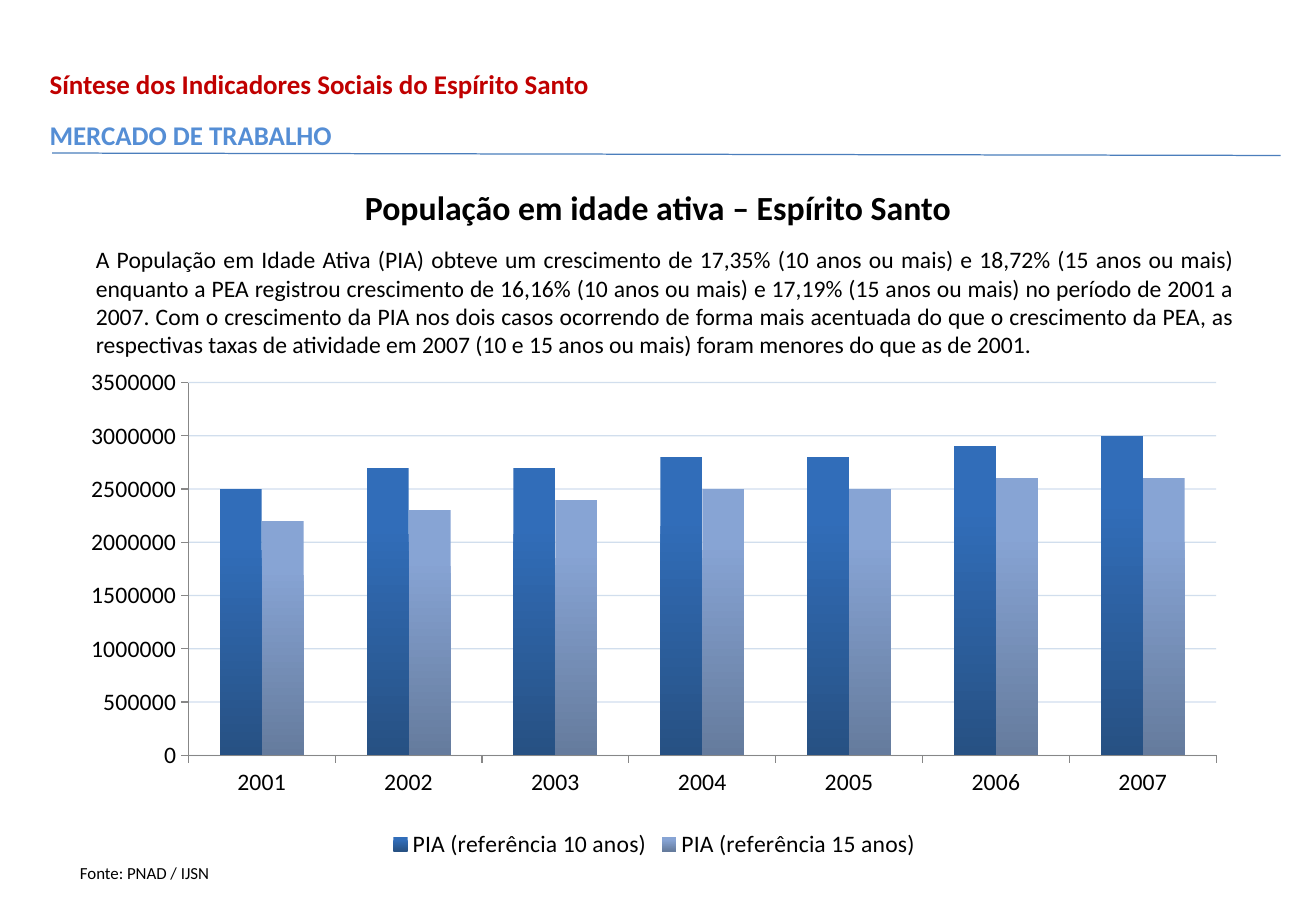
"""Build the slide on the working-age population of Espírito Santo."""
from lxml import etree
from pptx import Presentation
from pptx.chart.data import CategoryChartData
from pptx.dml.color import RGBColor
from pptx.enum.chart import XL_CHART_TYPE, XL_LEGEND_POSITION, XL_TICK_MARK
from pptx.enum.shapes import MSO_CONNECTOR
from pptx.enum.text import PP_ALIGN
from pptx.oxml import parse_xml
from pptx.oxml.ns import nsdecls, qn
from pptx.util import Inches, Pt

COLUMNS = XL_CHART_TYPE.COLUMN_CLUSTERED
BOTTOM = XL_LEGEND_POSITION.BOTTOM
OUTSIDE = XL_TICK_MARK.OUTSIDE
STRAIGHT = MSO_CONNECTOR.STRAIGHT
LEFT, CENTER, JUSTIFY = PP_ALIGN.LEFT, PP_ALIGN.CENTER, PP_ALIGN.JUSTIFY

COLORS = {
    "black": "000000", "red": "C00000", "blue": "558ED5", "rule": "4B7EBC",
    "grid": "4F81BD", "axis": "878787",
    "deep top": "316DB9", "deep base": "275183",
    "pale top": "87A4D4", "pale base": "657B9D",
}


def tint(name):
    """Return a named colour."""
    return RGBColor.from_string(COLORS[name])


class Board:
    """Hold the style and the current slide."""

    def __init__(self, slide, face="Calibri"):
        """Keep the slide and the font."""
        self.slide = slide
        self.face = face

    def text(self, box, lines, align=LEFT, wrap=True, gap=0):
        """Add a text box with one paragraph per (words, size, colour, bold)."""
        frame = self.slide.shapes.add_textbox(*map(Inches, box)).text_frame
        frame.word_wrap = wrap
        for i, (words, size, color, bold) in enumerate(lines):
            para = frame.add_paragraph() if i else frame.paragraphs[0]
            para.alignment = align
            if i:
                para.space_before = Pt(gap)
            run = para.add_run()
            run.text = words
            run.font.name = self.face
            run.font.size = Pt(size)
            run.font.bold = bold
            run.font.color.rgb = tint(color)

    def rule(self, start, end, color):
        """Add a thin straight line."""
        line = self.slide.shapes.add_connector(
            STRAIGHT, *map(Inches, start + end))
        line.line.color.rgb = tint(color)
        line.line.width = Pt(0.75)
        etree.SubElement(line._element.spPr, qn("a:effectLst"))

    def chart(self, box, years, series, plot):
        """Add a column chart with (name, shade, values) series."""
        data = CategoryChartData()
        data.categories = years
        for name, _, values in series:
            data.add_series(name, values)
        chart = self.slide.shapes.add_chart(
            COLUMNS, *map(Inches, box), data).chart
        chart.has_title = False
        chart.font.name = self.face
        chart.font.size = Pt(14)
        chart.font.color.rgb = tint("black")
        chart.has_legend = True
        chart.legend.position = BOTTOM
        chart.legend.include_in_layout = False

        bars = chart.plots[0]
        bars.vary_by_categories = False
        bars.gap_width = 150
        bars.overlap = 0
        for bar, (_, shade, _) in zip(bars.series, series):
            fill = bar.format.fill
            fill.gradient()
            fill.gradient_angle = 270
            stops = zip(fill.gradient_stops, ("top", "base"), (0.2, 1))
            for stop, end, spot in stops:
                stop.color.rgb = tint(f"{shade} {end}")
                stop.position = spot

        scale = chart.value_axis
        for axis in (chart.category_axis, scale):
            axis.major_tick_mark = OUTSIDE
            axis.format.line.color.rgb = tint("axis")
            axis.format.line.width = Pt(0.75)
        scale.minimum_scale, scale.maximum_scale = 0, 3500000
        scale.major_unit = 500000
        scale.tick_labels.number_format = "0"
        scale.tick_labels.number_format_is_linked = False
        grid = scale.major_gridlines.format.line
        grid.color.rgb = tint("grid")
        grid.width = Pt(0.75)
        area = chart._chartSpace.chart.plotArea
        for node in area.findall(
                f".//{qn('c:majorGridlines')}//{qn('a:srgbClr')}"):
            etree.SubElement(node, qn("a:alpha"), val="25000")
        self.place(area, box, plot)

    def place(self, area, box, plot):
        """Fix the inner plot area, given in inches within the chart."""
        for old in area.findall(qn("c:layout")):
            area.remove(old)
        spots = "".join(f'<c:{key} val="{part / whole:.4f}"/>'
                        for key, part, whole in zip("xywh", plot, box[2:] * 2))
        area.insert(0, parse_xml(
            f'<c:layout {nsdecls("c")}><c:manualLayout>'
            '<c:layoutTarget val="inner"/><c:xMode val="edge"/>'
            f'<c:yMode val="edge"/>{spots}</c:manualLayout></c:layout>'))


def main():
    """Build and save the slide."""
    deck = Presentation()
    deck.slide_width, deck.slide_height = Inches(10.83), Inches(7.5)
    board = Board(deck.slides.add_slide(deck.slide_layouts[6]))

    board.text((0, 1.49, 10.83, 0.44), [
        ("População em idade ativa – Espírito Santo", 20, "black", True),
    ], CENTER)
    board.text((0.56, 7.05, 1.27, 0.27), [
        ("Fonte: PNAD / IJSN", 10, "black", False),
    ], wrap=False)
    board.chart((0.67, 2.92, 9.43, 4.19), [str(y) for y in range(2001, 2008)], [
        ("PIA (referência 10 anos)", "deep",
         (2500000, 2700000, 2700000, 2800000, 2800000, 2900000, 3000000)),
        ("PIA (referência 15 anos)", "pale",
         (2200000, 2300000, 2400000, 2500000, 2500000, 2600000, 2600000)),
    ], (0.88, 0.23, 8.46, 3.07))
    board.text((0.69, 1.97, 9.57, 1.04), [
        ("A População em Idade Ativa (PIA) obteve um crescimento de 17,35% "
         "(10 anos ou mais) e 18,72% (15 anos ou mais) enquanto a PEA "
         "registrou crescimento de 16,16% (10 anos ou mais) e 17,19% "
         "(15 anos ou mais) no período de 2001 a 2007. Com o crescimento da "
         "PIA nos dois casos ocorrendo de forma mais acentuada do que o "
         "crescimento da PEA, as respectivas taxas de atividade em 2007 "
         "(10 e 15 anos ou mais) foram menores do que as de 2001.",
         14, "black", False),
    ], JUSTIFY)
    board.text((0.31, 0.51, 10.53, 1.12), [
        ("Síntese dos Indicadores Sociais do Espírito Santo", 16, "red", True),
        ("MERCADO DE TRABALHO", 16, "blue", True),
    ], gap=11)
    board.rule((0.43, 1.26), (10.54, 1.28), "rule")
    deck.save("out.pptx")


if __name__ == "__main__":
    main()
